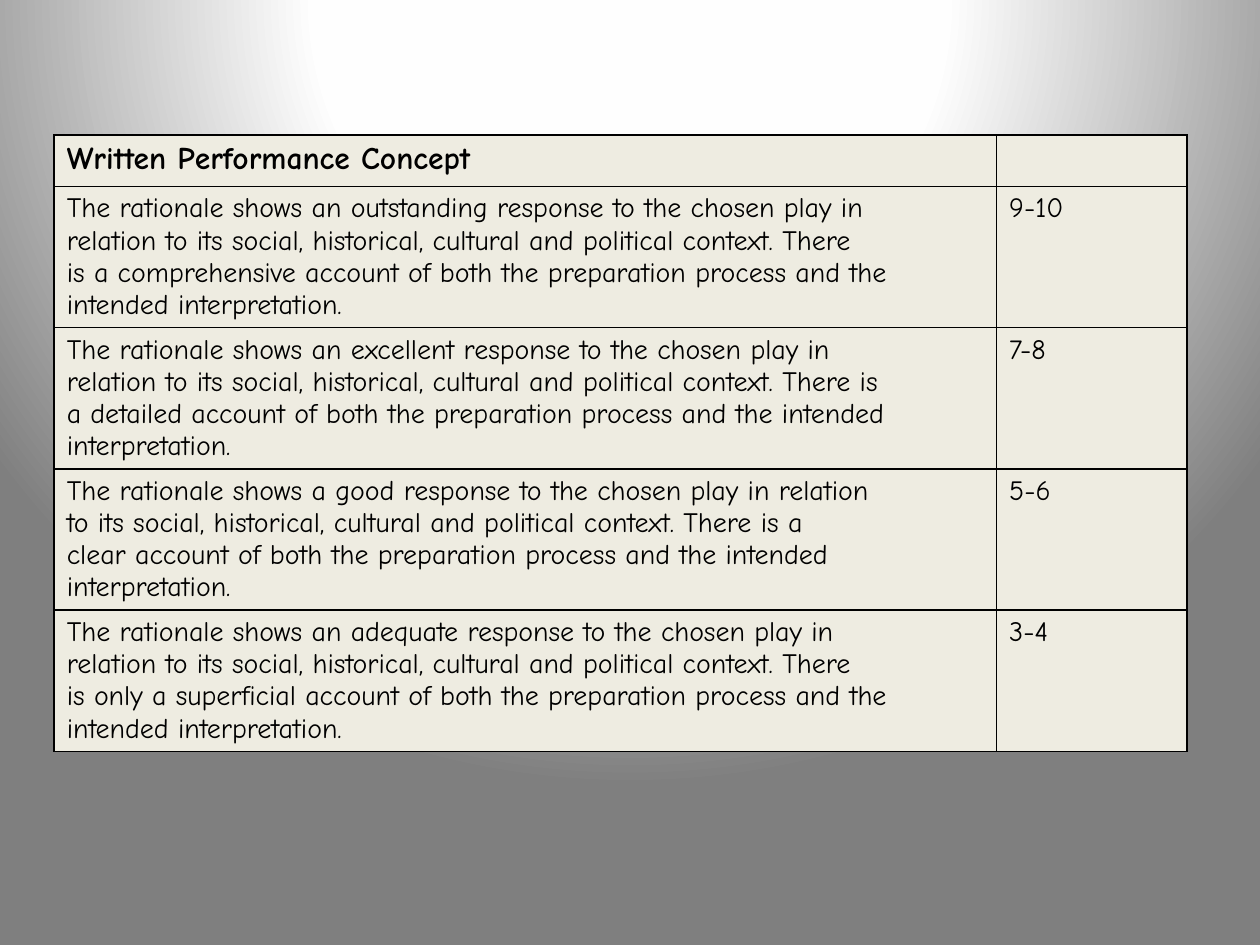
"""Build a slide with the marking bands for the written performance concept."""
import pptx
import pptx.dml.color
import pptx.oxml
import pptx.oxml.ns
import pptx.util
from pptx.util import Inches

INK = "000000"
CREAM = "EEECE1"
NAMESPACE = pptx.oxml.ns.nsdecls("a")
BACKGROUND_STOPS = [(0, "FFFFFF"), (40, "FEFEFE"), (100, "7F7F7F")]
BANDS = [
    ("9-10", [
        "The rationale shows an outstanding response to the chosen play in",
        "relation to its social, historical, cultural and political context. There",
        "is a comprehensive account of both the preparation process and the",
        "intended interpretation.",
    ]),
    ("7-8", [
        "The rationale shows an excellent response to the chosen play in",
        "relation to its social, historical, cultural and political context. There is",
        "a detailed account of both the preparation process and the intended",
        "interpretation.",
    ]),
    ("5-6", [
        "The rationale shows a good response to the chosen play in relation",
        "to its social, historical, cultural and political context. There is a",
        "clear account of both the preparation process and the intended",
        "interpretation.",
    ]),
    ("3-4", [
        "The rationale shows an adequate response to the chosen play in",
        "relation to its social, historical, cultural and political context. There",
        "is only a superficial account of both the preparation process and the",
        "intended interpretation.",
    ]),
]


def color(value):
    """Turn a hex string into a colour."""
    return pptx.dml.color.RGBColor.from_string(value)


def fill_cell(cell, lines, size, bold):
    """Style a cell with fill and borders and write its lines."""
    properties = cell._tc.get_or_add_tcPr()
    for side in ("lnL", "lnR", "lnT", "lnB"):
        properties.append(pptx.oxml.parse_xml(
            f'<a:{side} {NAMESPACE} w="{pptx.util.Pt(1)}"><a:solidFill>'
            f'<a:srgbClr val="{INK}"/></a:solidFill></a:{side}>'))
    cell.fill.solid()
    cell.fill.fore_color.rgb = color(CREAM)
    frame = cell.text_frame
    for index, line in enumerate(lines):
        para = frame.add_paragraph() if index else frame.paragraphs[0]
        span = para.add_run()
        span.text = line
        span.font.name = "Comic Neue"
        span.font.size = pptx.util.Pt(size)
        span.font.bold = bold
        span.font.color.rgb = color(INK)


deck = pptx.Presentation()
deck.slide_width = Inches(10)
deck.slide_height = Inches(7.5)
page = deck.slides.add_slide(deck.slide_layouts[6])

page.background.fill.gradient()
gradient = page.background._cSld.find(".//" + pptx.oxml.ns.qn("a:gradFill"))
stops = "".join(
    f'<a:gs pos="{position * 1000}"><a:srgbClr val="{value}"/></a:gs>'
    for position, value in BACKGROUND_STOPS)
gradient.getparent().replace(gradient, pptx.oxml.parse_xml(
    f'<a:gradFill {NAMESPACE} rotWithShape="1"><a:gsLst>{stops}</a:gsLst>'
    '<a:path path="circle"><a:fillToRect l="50000" t="-80000" r="50000" b="180000"/>'
    '</a:path></a:gradFill>'))

table = page.shapes.add_table(
    len(BANDS) + 1, 2, Inches(0.43), Inches(1.07), Inches(8.99), Inches(4.89)).table
table.columns[0].width = Inches(7.48)
table.columns[1].width = Inches(1.51)

table.rows[0].height = Inches(0.41)
fill_cell(table.cell(0, 0), ["Written Performance Concept"], 18, True)
fill_cell(table.cell(0, 1), [], 18, True)
for row, (marks, description) in enumerate(BANDS, start=1):
    table.rows[row].height = Inches(1.12)
    fill_cell(table.cell(row, 0), description, 16, False)
    fill_cell(table.cell(row, 1), [marks], 16, False)

deck.save("out.pptx")
